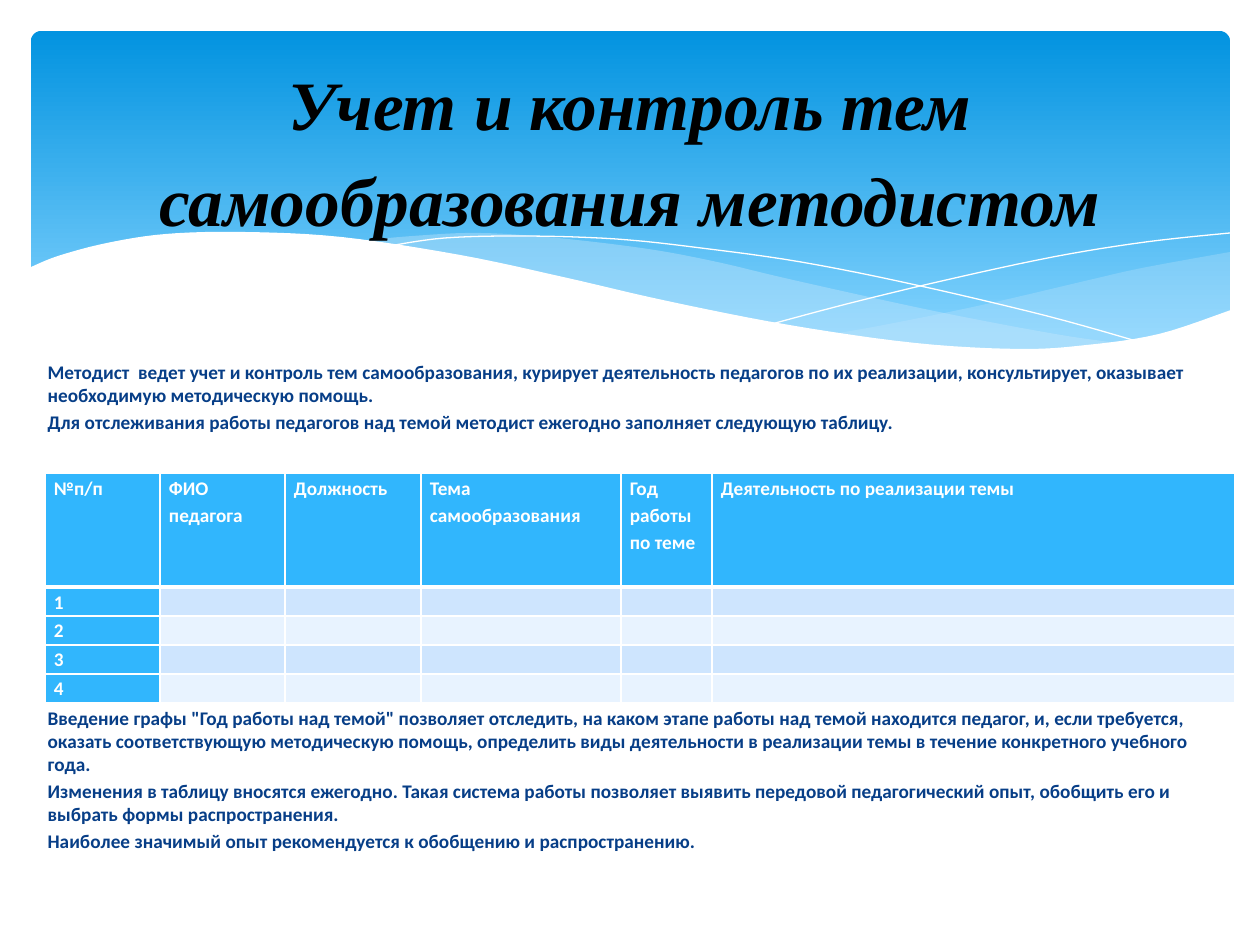
"""Builds the slide on tracking teachers' self-education topics."""
from dataclasses import dataclass
from typing import Optional

from lxml.etree import SubElement
from pptx import Presentation
from pptx.dml.color import RGBColor
from pptx.enum.shapes import MSO_SHAPE as Shape
from pptx.enum.text import MSO_ANCHOR as Anchor, PP_ALIGN as Align
from pptx.oxml.ns import qn
from pptx.util import Emu, Pt

EMU_PER_PX = 914400 / 126
CURVE_STEPS = 6

WHITE = RGBColor(0xFF, 0xFF, 0xFF)
BLACK = RGBColor(0x00, 0x00, 0x00)
NAVY = RGBColor(0x07, 0x3E, 0x87)
SKY_TOP = RGBColor(0x02, 0x93, 0xE0)
SKY_BOTTOM = RGBColor(0x83, 0xD3, 0xFE)
MIST = RGBColor(0xC6, 0xE7, 0xFC)
HEADER = RGBColor(0x31, 0xB6, 0xFD)
BANDS = (RGBColor(0xCE, 0xE5, 0xFE), RGBColor(0xE8, 0xF3, 0xFF))

Point = tuple[float, float]


@dataclass(frozen=True)
class Wave:
    """A shape bounded by smooth edges, or a single smooth line without fill."""
    edges: list[list[Point]]
    fill: Optional[RGBColor] = None
    opacity: int = 100


@dataclass(frozen=True)
class Note:
    """A body paragraph with its space before in points."""
    text: str
    before: int = 2


WAVES = [
    Wave([[(1230, 252), (1142, 268), (1085, 281), (982, 305), (889, 324), (833, 334)],
          [(833, 334), (906, 343), (969, 348), (1026, 350), (1087, 346), (1140, 339),
           (1187, 328), (1230, 311)]], MIST, 29),
    Wave([[(1125, 344), (1055, 334), (934, 311), (793, 280), (717, 262), (648, 249),
           (557, 238), (479, 233), (413, 236), (360, 241)],
          [(360, 241), (456, 256), (566, 280), (713, 312), (819, 333), (910, 345),
           (989, 350), (1068, 349), (1125, 344)]], MIST, 40),
    Wave([[(389, 246), (445, 238), (524, 236), (616, 239), (701, 248), (801, 262),
           (916, 285), (1047, 316), (1143, 343)]]),
    Wave([[(772, 324), (847, 304), (942, 281), (1053, 257), (1146, 242), (1230, 233)]]),
    Wave([[(29, 268), (58, 256), (107, 243), (166, 234), (243, 232), (341, 237),
           (460, 255), (563, 277), (667, 301), (789, 325), (915, 343), (1019, 349),
           (1087, 345), (1159, 334), (1231, 310)],
          [(1231, 415), (29, 415)]], WHITE),
]

TITLE = "Учет и контроль тем самообразования методистом"
NOTES = [
    Note("Методист  ведет учет и контроль тем самообразования, курирует деятельность педагогов "
         "по их реализации, консультирует, оказывает необходимую методическую помощь."),
    Note("Для отслеживания работы педагогов над темой методист ежегодно заполняет "
         "следующую таблицу."),
    Note("Введение графы \"Год работы над темой\" позволяет отследить, на каком этапе работы "
         "над темой находится педагог, и, если требуется, оказать соответствующую методическую "
         "помощь, определить виды деятельности в реализации темы в течение конкретного "
         "учебного года.", 156),
    Note("Изменения в таблицу вносятся ежегодно. Такая система работы позволяет выявить "
         "передовой педагогический опыт, обобщить его и выбрать формы распространения."),
    Note("Наиболее значимый опыт рекомендуется к обобщению и распространению."),
]
COLUMNS = {"№п/п": 115, "ФИО педагога": 125, "Должность": 136, "Тема самообразования": 200,
           "Год работы по теме": 91, "Деятельность по реализации темы": 523}
ROW_HEIGHTS = [114, 29, 29, 29, 29]


def px(n: float) -> Emu:
    """Turns pixels into EMU."""
    return Emu(round(n * EMU_PER_PX))


def place(s, left: int, top: int, width: int, height: int) -> None:
    """Moves and sizes a shape in pixels."""
    s.left, s.top, s.width, s.height = map(px, (left, top, width, height))


def smooth(knots: list[Point]) -> list[Point]:
    """Runs a Catmull-Rom curve through the knots; two knots stay straight."""
    if len(knots) < 3:
        return knots
    padded = [knots[0], *knots, knots[-1]]
    points = [knots[0]]
    for a, b, c, d in zip(padded, padded[1:], padded[2:], padded[3:]):
        for step in range(1, CURVE_STEPS + 1):
            t = step / CURVE_STEPS
            points.append(tuple(
                (2 * q + (r - p) * t + (2 * p - 5 * q + 4 * r - s) * t ** 2
                 + (3 * q - p - 3 * r + s) * t ** 3) / 2
                for p, q, r, s in zip(a, b, c, d)))
    return points


def add_sky(shapes) -> None:
    """Draws the rounded gradient panel."""
    s = shapes.add_shape(Shape.ROUNDED_RECTANGLE, px(31), px(31), px(1199), px(340))
    s.adjustments[0] = 0.03
    s.shadow.inherit = False
    s.line.fill.background()
    s.fill.gradient()
    s.fill.gradient_angle = 270
    for stop, color, position in zip(s.fill.gradient_stops, (SKY_TOP, SKY_BOTTOM), (0, 0.9)):
        stop.color.rgb, stop.position = color, position


def add_wave(shapes, wave: Wave) -> None:
    """Draws one wave."""
    points = [(px(x), px(y)) for edge in wave.edges for x, y in smooth(edge)]
    builder = shapes.build_freeform(*points[0])
    builder.add_line_segments(points[1:], close=wave.fill is not None)
    s = builder.convert_to_shape()
    s.shadow.inherit = False
    if wave.fill is None:
        s.fill.background()
        s.line.color.rgb, s.line.width = WHITE, Pt(0)
        return
    s.line.fill.background()
    s.fill.solid()
    s.fill.fore_color.rgb = wave.fill
    if wave.opacity < 100:
        color = s.element.spPr.find(qn("a:solidFill"))[0]
        SubElement(color, qn("a:alpha"), val=str(wave.opacity * 1000))


def style(p, font: str, size: float, color: RGBColor, italic: bool = False) -> None:
    """Formats the runs of a paragraph in bold."""
    for r in p.runs:
        r.font.name, r.font.size, r.font.bold, r.font.italic = font, Pt(size), True, italic
        r.font.color.rgb = color


def fill_title(s) -> None:
    """Places and fills the title."""
    place(s, 63, 47, 1134, 173)
    tf = s.text_frame
    tf.text = TITLE
    tf.vertical_anchor, tf.margin_top, tf.margin_bottom = Anchor.TOP, px(2), 0
    p = tf.paragraphs[0]
    p.alignment, p.line_spacing = Align.CENTER, 1.15
    style(p, "Times New Roman", 39.6, BLACK, italic=True)


def fill_body(s) -> None:
    """Places the body and fills it with unbulleted notes around the table."""
    place(s, 35, 354, 1201, 546)
    tf = s.text_frame
    tf.text = "\n".join(note.text for note in NOTES)
    for p, note in zip(tf.paragraphs, NOTES):
        p.space_before = Pt(note.before)
        pPr = p._p.get_or_add_pPr()
        pPr.set("marL", "0")
        pPr.set("indent", "0")
        SubElement(pPr, qn("a:buNone"))
        style(p, "Calibri", 11, NAVY)


def format_cell(cell, text: str, fill: RGBColor, top: int, bottom: int) -> None:
    """Fills a cell and gives it white borders, widths in points."""
    cell.text = text
    cell.margin_left = cell.margin_right = px(9)
    cell.margin_top = cell.margin_bottom = 0
    p = cell.text_frame.paragraphs[0]
    p.line_spacing = 1.15
    style(p, "Calibri", 11, WHITE)
    if not text:
        SubElement(p._p, qn("a:endParaRPr"), sz="1100")
    tcPr = cell._tc.get_or_add_tcPr()
    for side, width in {"L": 1, "R": 1, "T": top, "B": bottom}.items():
        ln = SubElement(tcPr, qn(f"a:ln{side}"), w=str(Pt(width)))
        SubElement(SubElement(ln, qn("a:solidFill")), qn("a:srgbClr"), val=str(WHITE))
    cell.fill.solid()
    cell.fill.fore_color.rgb = fill


def add_topics_table(shapes) -> None:
    """Draws the table of topics with empty numbered rows."""
    table = shapes.add_table(len(ROW_HEIGHTS), len(COLUMNS), px(45), px(473),
                             px(sum(COLUMNS.values())), px(sum(ROW_HEIGHTS))).table
    for column, width in zip(table.columns, COLUMNS.values()):
        column.width = px(width)
    for i, (row, height) in enumerate(zip(table.rows, ROW_HEIGHTS)):
        row.height = px(height)
        for j, (cell, heading) in enumerate(zip(row.cells, COLUMNS)):
            text = heading if i == 0 else str(i) if j == 0 else ""
            fill = HEADER if text else BANDS[(i - 1) % 2]
            format_cell(cell, text, fill, 3 if i == 1 else 1, 3 if i == 0 else 1)


def main() -> None:
    """Builds and saves the slide."""
    prs = Presentation()
    prs.slide_width, prs.slide_height = px(1260), px(945)
    shapes = prs.slides.add_slide(prs.slide_layouts[1]).shapes
    title, body = shapes.title, shapes.placeholders[1]
    add_sky(shapes)
    for wave in WAVES:
        add_wave(shapes, wave)
    fill_body(body)
    fill_title(title)
    for s in (body, title):
        shapes.element.append(s.element)
    add_topics_table(shapes)
    prs.save("out.pptx")


if __name__ == "__main__":
    main()
